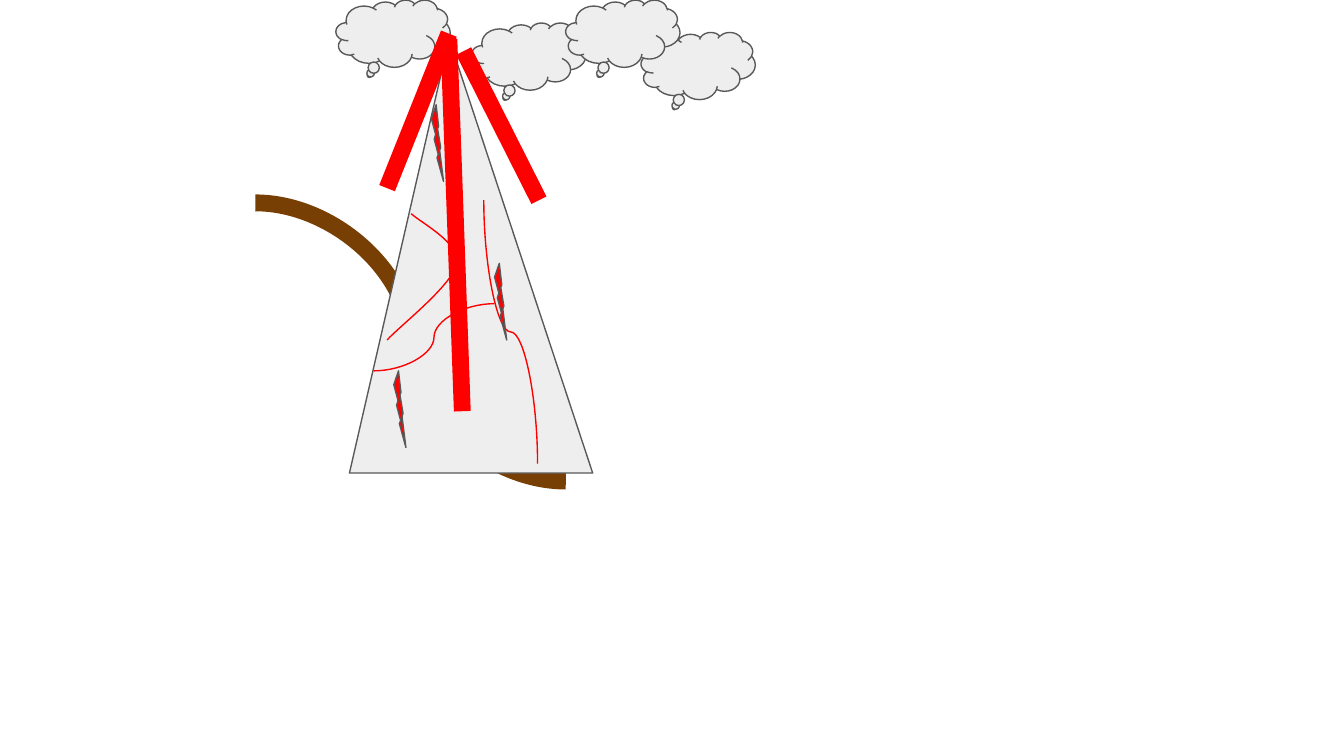
"""Draw an erupting volcano with lava, ash clouds and lightning."""
import pptx
import pptx.dml.color
import pptx.enum.shapes
import pptx.oxml.ns
import pptx.util

COLORS = {"earth": "783F04", "rock": "EEEEEE", "outline": "595959", "lava": "FF0000"}
WIDTH = pptx.util.Inches(10)
HEIGHT = pptx.util.Emu(WIDTH * 9 // 16)
UNIT = WIDTH / 100
THIN, THICK = 0.75, 9
SHAPES = pptx.enum.shapes.MSO_SHAPE
CONNECTORS = pptx.enum.shapes.MSO_CONNECTOR


def grid(*units):
    """Turn grid units, each a hundredth of the slide's width, into lengths."""
    return [pptx.util.Emu(round(unit * UNIT)) for unit in units]


def rgb(name):
    """Return the named colour."""
    return pptx.dml.color.RGBColor.from_string(COLORS[name])


def set_line(element, color, weight):
    """Set the colour and weight of an outline."""
    element.line.color.rgb = rgb(color)
    element.line.width = pptx.util.Pt(weight)


def add_solid(slide, preset, box, fill):
    """Add a filled preset shape with a thin outline."""
    solid = slide.shapes.add_shape(preset, *grid(*box))
    solid.shadow.inherit = False
    solid.fill.solid()
    solid.fill.fore_color.rgb = rgb(fill)
    set_line(solid, "outline", THIN)
    return solid


def add_stream(slide, kind, ends, color, weight):
    """Add a straight or curved connector without a shadow."""
    stream = slide.shapes.add_connector(kind, *grid(*ends))
    set_line(stream, color, weight)
    properties = stream._element.spPr
    properties.append(properties.makeelement(pptx.oxml.ns.qn("a:effectLst"), {}))
    return stream


def add_falling_curve(slide, left, top, right, bottom, color):
    """Add a curve that leaves and arrives vertically, by a quarter turn."""
    middle_x, middle_y = (left + right) / 2, (top + bottom) / 2
    half_run, half_rise = (bottom - top) / 2, (right - left) / 2
    ends = (middle_x + half_run, middle_y - half_rise,
            middle_x - half_run, middle_y + half_rise)
    curve = add_stream(slide, CONNECTORS.CURVE, ends, color, THIN)
    curve._element.spPr.xfrm.set("rot", str(270 * 60000))


def add_bezier(slide, start, controls, color):
    """Add an open outline made of cubic curves."""
    builder = slide.shapes.build_freeform(*grid(*start))
    builder.add_line_segments([grid(*point) for point in controls], close=False)
    crack = builder.convert_to_shape()
    crack.shadow.inherit = False
    crack.fill.background()
    set_line(crack, color, THIN)
    qn = pptx.oxml.ns.qn
    segments = list(crack._element.iter(qn("a:lnTo")))
    for first in range(0, len(segments), 3):
        trio = segments[first:first + 3]
        cubic = trio[0].makeelement(qn("a:cubicBezTo"), {})
        trio[0].addprevious(cubic)
        for segment in trio:
            cubic.append(segment[0])
            segment.getparent().remove(segment)


def main():
    """Build and save the slide."""
    deck = pptx.Presentation()
    deck.slide_width, deck.slide_height = WIDTH, HEIGHT
    slide = deck.slides.add_slide(deck.slide_layouts[6])

    add_stream(slide, CONNECTORS.CURVE, (19, 15.1, 42.1, 35.8), "earth", THICK)
    cone = add_solid(slide, SHAPES.ISOSCELES_TRIANGLE, (26, 2.9, 18.1, 32.3), "rock")
    cone.adjustments[0] = 0.41

    add_bezier(slide, (30.6, 15.9),
               [(31.2, 16.5), (34.3, 18.1), (34, 19.6),
                (33.7, 21.2), (29.7, 24.3), (28.8, 25.3)], "lava")
    add_stream(slide, CONNECTORS.CURVE, (36.8, 22.6, 27.8, 27.6), "lava", THIN)
    add_falling_curve(slide, 36, 14.9, 40, 34.5, "lava")
    add_stream(slide, CONNECTORS.STRAIGHT, (33.4, 2.9, 34.4, 30.6), "lava", THICK)

    for cloud in [(35.1, 1.7), (47.7, 2.4), (25, 0), (42.1, 0)]:
        add_solid(slide, SHAPES.CLOUD_CALLOUT, cloud + (8.5, 5), "rock")
    for bolt in [(32.1, 7.8), (36.8, 19.6), (29.3, 27.6)]:
        add_solid(slide, SHAPES.LIGHTNING_BOLT, bolt + (0.9, 5.7), "lava")

    for spray in [(34.5, 3.8, 40.1, 14.9), (33.4, 2.5, 28.8, 14)]:
        add_stream(slide, CONNECTORS.STRAIGHT, spray, "lava", THICK)

    deck.save("out.pptx")


if __name__ == "__main__":
    main()
